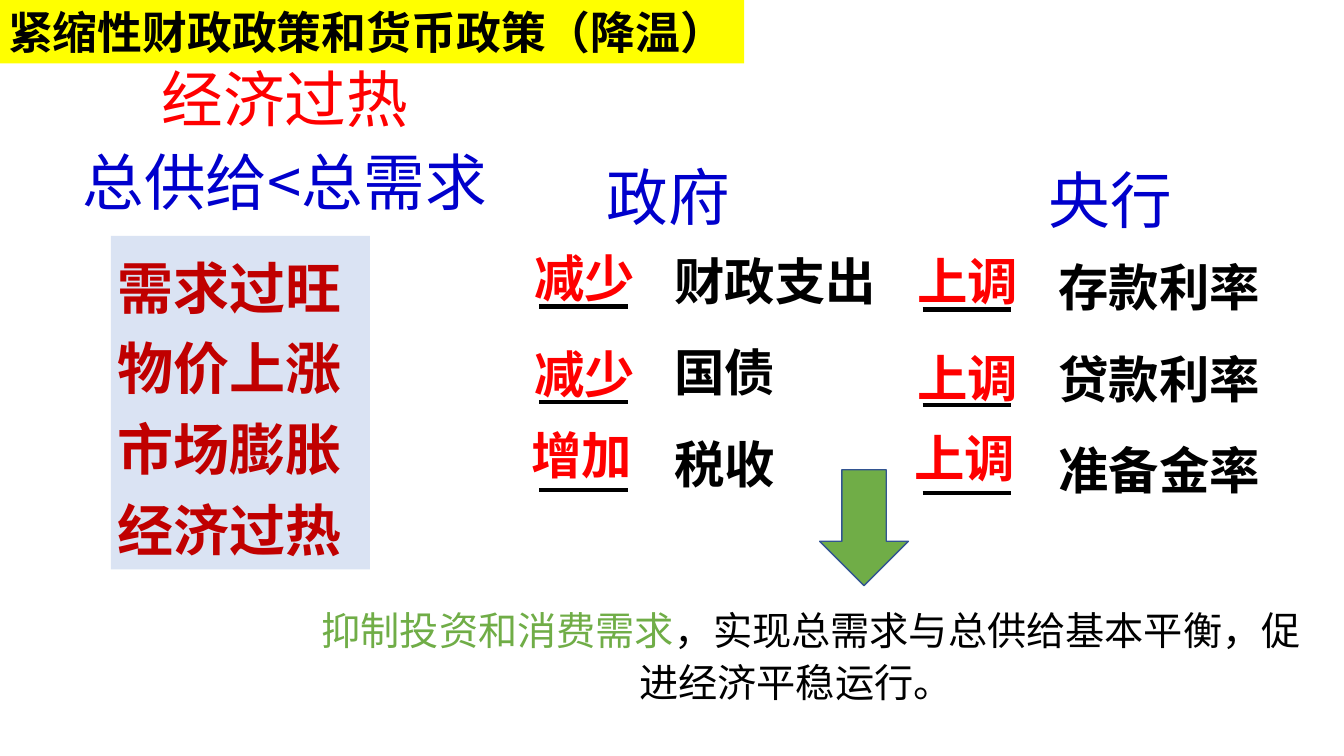
from lxml import etree
from pptx import Presentation
from pptx.dml.color import RGBColor
from pptx.enum.shapes import MSO_CONNECTOR, MSO_SHAPE
from pptx.enum.text import MSO_ANCHOR, MSO_AUTO_SIZE, PP_ALIGN
from pptx.oxml.ns import qn
from pptx.util import Inches, Pt

LEFT, CENTER = PP_ALIGN.LEFT, PP_ALIGN.CENTER
TOP, MIDDLE = MSO_ANCHOR.TOP, MSO_ANCHOR.MIDDLE
NO_AUTOSIZE = MSO_AUTO_SIZE.NONE
STRAIGHT = MSO_CONNECTOR.STRAIGHT
DOWN_ARROW = MSO_SHAPE.DOWN_ARROW

BLACK = RGBColor(0x00, 0x00, 0x00)
RED = RGBColor(0xFF, 0x00, 0x00)
DARK_RED = RGBColor(0xC0, 0x00, 0x00)
BLUE = RGBColor(0x00, 0x00, 0xCC)
GREEN = RGBColor(0x70, 0xAD, 0x47)
ARROW_EDGE = RGBColor(0x32, 0x54, 0x91)
YELLOW = RGBColor(0xFF, 0xFF, 0x00)
PALE_BLUE = RGBColor(0xDA, 0xE3, 0xF3)
FONT = "Noto Sans CJK SC"

HEADING = "紧缩性财政政策和货币政策（降温）"
DIAGNOSIS = [[("经济过热", RED)], [("总供给<总需求", BLUE)]]
SYMPTOMS = ["需求过旺", "物价上涨", "市场膨胀", "经济过热"]
OUTCOME = [[("抑制投资和消费需求", GREEN),
            ("，实现总需求与总供给基本平衡，促进经济平稳运行。", BLACK)]]
ACTORS = [
    {"name": "政府", "name_left": 5.87, "left": 5.2, "top": 2.4,
     "tools_at": (6.59, 2.37, 2.67, 2.7),
     "measures": [("减少", "财政支出"), ("减少", "国债"), ("增加", "税收")]},
    {"name": "央行", "name_left": 10.25, "left": 9.0, "top": 2.43,
     "tools_at": (10.4, 2.43, 2.55, 2.7),
     "measures": [("上调", "存款利率"), ("上调", "贷款利率"), ("上调", "准备金率")]},
]
NAME_ABOVE = 0.87
ACTION_OFFSETS = [(0, 0), (0, 0.96), (-0.03, 1.76)]
BLANK_OFFSETS = [0.64, 1.59, 2.46]
BLANK_INSET, BLANK_WIDTH = 0.15, 0.88


def one_colour(lines, colour):
    return [[(line, colour)] for line in lines]


def place(shape, at):
    shape.left, shape.top, shape.width, shape.height = map(Inches, at)


def write(shape, paragraphs, size, bold=False, align=LEFT, spacing=1.0,
          before=0, first_indent=0, anchor=TOP, margins=(0.1, 0.05)):
    frame = shape.text_frame
    side, edge = map(Inches, margins)
    frame_format = {"word_wrap": True, "auto_size": NO_AUTOSIZE,
                    "vertical_anchor": anchor, "margin_left": side,
                    "margin_right": side, "margin_top": edge,
                    "margin_bottom": edge}
    for key, value in frame_format.items():
        setattr(frame, key, value)
    for index, runs in enumerate(paragraphs):
        paragraph = frame.add_paragraph() if index else frame.paragraphs[0]
        properties = paragraph._p.get_or_add_pPr()
        properties.set("marL", "0")
        properties.set("indent", str(Inches(first_indent)))
        etree.SubElement(properties, qn("a:buNone"))
        paragraph_format = {"alignment": align, "line_spacing": spacing,
                            "space_before": Pt(before if index else 0),
                            "space_after": Pt(0)}
        for key, value in paragraph_format.items():
            setattr(paragraph, key, value)
        for text, colour in runs:
            run = paragraph.add_run()
            run.text = text
            run_format = {"size": Pt(size), "bold": bold, "name": FONT}
            for key, value in run_format.items():
                setattr(run.font, key, value)
            run.font.color.rgb = colour
            east_asian = etree.SubElement(run._r.get_or_add_rPr(), qn("a:ea"))
            east_asian.set("typeface", FONT)


def fill(shape, colour):
    shape.fill.solid()
    shape.fill.fore_color.rgb = colour


def add_text(slide, at, paragraphs, size, **formats):
    box = slide.shapes.add_textbox(*map(Inches, at))
    write(box, paragraphs, size, **formats)


def add_blank(slide, left, top):
    blank = slide.shapes.add_connector(
        STRAIGHT, Inches(left), Inches(top),
        Inches(left + BLANK_WIDTH), Inches(top))
    blank.line.color.rgb = BLACK
    blank.line.width = Pt(3)
    etree.SubElement(blank._element.spPr, qn("a:effectLst"))


def add_actor(slide, actor):
    left, top = actor["left"], actor["top"]
    add_text(slide, (actor["name_left"], top - NAME_ABOVE, 1.52, 0.84),
             one_colour([actor["name"]], BLUE), 44, align=CENTER)
    tools = [tool for _, tool in actor["measures"]]
    add_text(slide, actor["tools_at"], one_colour(tools, BLACK), 36,
             bold=True, spacing=1.1, before=18)
    for (action, _), (dx, dy), blank_dy in zip(
            actor["measures"], ACTION_OFFSETS, BLANK_OFFSETS):
        add_text(slide, (left + dx, top + dy, 1.24, 0.7),
                 one_colour([action], RED), 36, bold=True)
        add_blank(slide, left + BLANK_INSET, top + blank_dy)


def main():
    deck = Presentation()
    deck.slide_width, deck.slide_height = Inches(13.33), Inches(7.5)
    slide = deck.slides.add_slide(deck.slide_layouts[1])

    title, symptoms = slide.placeholders
    place(title, (-0.02, -0.01, 7.4, 0.64))
    fill(title, YELLOW)
    write(title, one_colour([HEADING], BLACK), 32, bold=True, anchor=MIDDLE)

    place(symptoms, (1.1, 2.34, 2.57, 3.31))
    fill(symptoms, PALE_BLUE)
    write(symptoms, one_colour(SYMPTOMS, DARK_RED), 40, bold=True,
          spacing=1.2, margins=(0.07, 0.04))

    for actor in ACTORS:
        add_actor(slide, actor)

    arrow = slide.shapes.add_shape(
        DOWN_ARROW, *map(Inches, (8.13, 4.66, 0.88, 1.15)))
    arrow.shadow.inherit = False
    fill(arrow, GREEN)
    arrow.line.color.rgb = ARROW_EDGE
    arrow.line.width = Pt(1)

    add_text(slide, (2.76, 5.92, 10.27, 1.14), OUTCOME, 28, align=CENTER,
             spacing=1.1, first_indent=0.3)
    add_text(slide, (-0.02, 0.76, 5.69, 1.51), DIAGNOSIS, 44, align=CENTER,
             spacing=0.7, before=22)

    deck.save("out.pptx")


if __name__ == "__main__":
    main()
